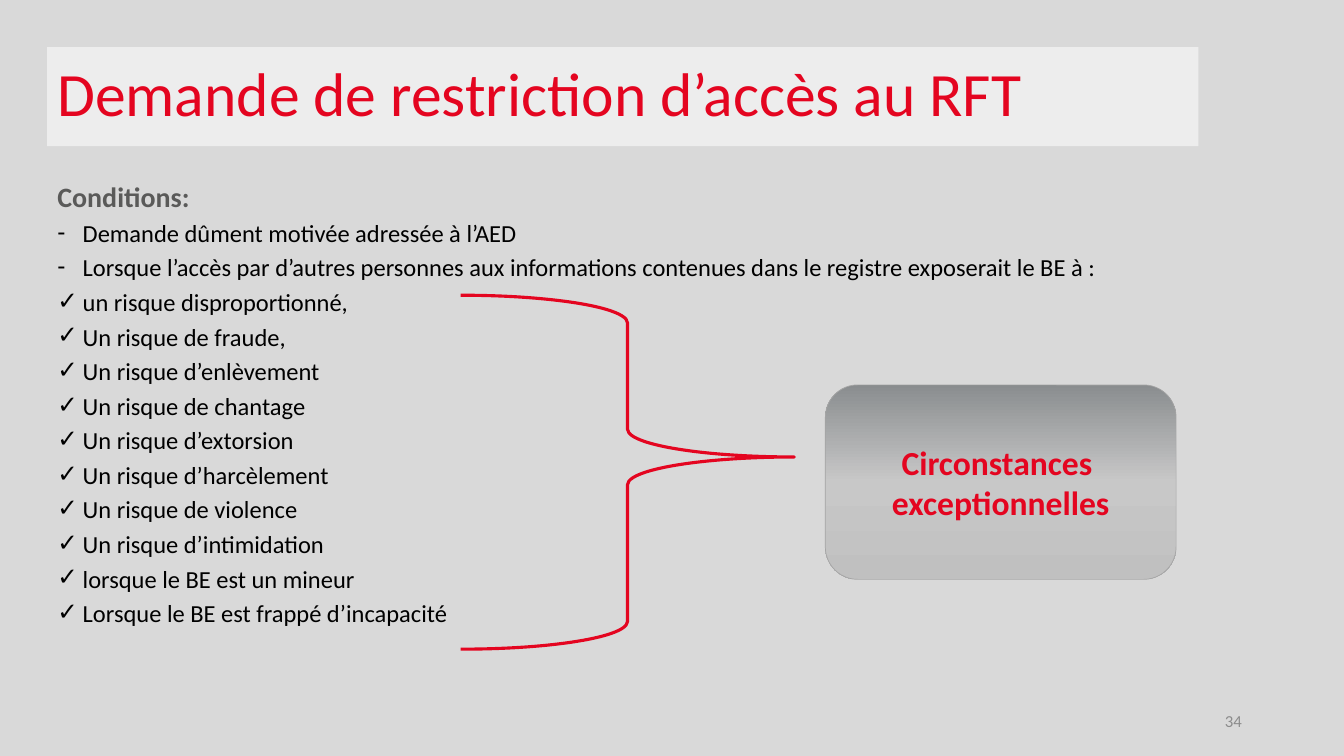
import copy
from dataclasses import dataclass

import pptx
import pptx.dml.color
import pptx.enum.dml
import pptx.enum.shapes
import pptx.enum.text
import pptx.oxml
import pptx.oxml.ns
import pptx.util
from pptx.util import Cm, Pt

RGBColor = pptx.dml.color.RGBColor
MSO_SHAPE = pptx.enum.shapes.MSO_SHAPE
PP_ALIGN = pptx.enum.text.PP_ALIGN
MSO_ANCHOR = pptx.enum.text.MSO_ANCHOR

RED = RGBColor(0xE4, 0x05, 0x20)
BLACK = RGBColor(0, 0, 0)
HEADING_GREY = RGBColor(0x5A, 0x5A, 0x59)
NUMBER_GREY = RGBColor(0x8C, 0x8C, 0x8C)
BACKGROUND = RGBColor(0xD9, 0xD9, 0xD9)
TITLE_FILL = RGBColor(0xED, 0xED, 0xED)
BOX_LINE = RGBColor(0xA5, 0xA5, 0xA5)
BOX_GRADIENT = (
    (0.0, RGBColor(0x8A, 0x8D, 0x8F)),
    (0.5, RGBColor(0xC8, 0xC8, 0xC8)),
    (1.0, RGBColor(0xC0, 0xC0, 0xC0)),
)
FONT = "Calibri"
INDENT = Cm(0.64)


@dataclass(frozen=True)
class Frame:
    left: float
    top: float
    width: float
    height: float

    def lengths(self) -> tuple:
        return Cm(self.left), Cm(self.top), Cm(self.width), Cm(self.height)


@dataclass(frozen=True)
class TextStyle:
    size: float
    color: RGBColor
    bold: bool = False


@dataclass(frozen=True)
class Line:
    text: str
    bullet: str = ""


TITLE_FRAME = Frame(1.19, 1.19, 29.01, 2.49)
BODY_FRAME = Frame(1.19, 4.62, 29.01, 12.6)
BRACE_FRAME = Frame(11.61, 7.44, 8.41, 8.92)
BOX_FRAME = Frame(20.8, 9.7, 8.84, 4.9)
NUMBER_FRAME = Frame(23.93, 17.65, 7.62, 1.02)

TITLE_STYLE = TextStyle(44, RED)
HEADING_STYLE = TextStyle(20, HEADING_GREY, True)
ITEM_STYLE = TextStyle(17.5, BLACK)
BOX_STYLE = TextStyle(24, RED, True)
NUMBER_STYLE = TextStyle(12, NUMBER_GREY)

CONDITIONS = (
    Line("Conditions:"),
    Line("Demande dûment motivée adressée à l’AED", "-"),
    Line("Lorsque l’accès par d’autres personnes aux informations contenues "
         "dans le registre exposerait le BE à :", "-"),
    Line("un risque disproportionné,", "✓"),
    Line("Un risque de fraude,", "✓"),
    Line("Un risque d’enlèvement", "✓"),
    Line("Un risque de chantage", "✓"),
    Line("Un risque d’extorsion", "✓"),
    Line("Un risque d’harcèlement", "✓"),
    Line("Un risque de violence", "✓"),
    Line("Un risque d’intimidation", "✓"),
    Line("lorsque le BE est un mineur", "✓"),
    Line("Lorsque le BE est frappé d’incapacité", "✓"),
)


def place(shape, frame: Frame) -> None:
    shape.left, shape.top, shape.width, shape.height = frame.lengths()


def prepare_text(shape, anchor):
    text_frame = shape.text_frame
    text_frame.word_wrap = True
    text_frame.auto_size = pptx.enum.text.MSO_AUTO_SIZE.NONE
    text_frame.vertical_anchor = anchor
    return text_frame


def add_paragraph(text_frame, index: int, text: str, style: TextStyle, alignment):
    paragraph = text_frame.add_paragraph() if index else text_frame.paragraphs[0]
    paragraph.alignment = alignment
    run = paragraph.add_run()
    run.text = text
    run.font.name = FONT
    run.font.size = Pt(style.size)
    run.font.bold = style.bold
    run.font.color.rgb = style.color
    return paragraph


def set_bullet(paragraph, bullet: str) -> None:
    properties = paragraph._p.get_or_add_pPr()
    properties.set("marL", str(INDENT if bullet else 0))
    properties.set("indent", str(-INDENT if bullet else 0))
    element = pptx.oxml.parse_xml(
        f'<a:{"buChar" if bullet else "buNone"} {pptx.oxml.ns.nsdecls("a")}/>'
    )
    if bullet:
        element.set("char", bullet)
    properties.append(element)


def fill_title(slide) -> None:
    title = slide.shapes.title
    place(title, TITLE_FRAME)
    title.fill.solid()
    title.fill.fore_color.rgb = TITLE_FILL
    text_frame = prepare_text(title, MSO_ANCHOR.MIDDLE)
    paragraph = add_paragraph(text_frame, 0, "Demande de restriction d’accès au RFT",
                              TITLE_STYLE, PP_ALIGN.LEFT)
    paragraph.line_spacing = 0.9


def fill_conditions(slide) -> None:
    body = slide.placeholders[1]
    place(body, BODY_FRAME)
    text_frame = prepare_text(body, MSO_ANCHOR.TOP)
    for index, line in enumerate(CONDITIONS):
        style = ITEM_STYLE if line.bullet else HEADING_STYLE
        paragraph = add_paragraph(text_frame, index, line.text, style, PP_ALIGN.LEFT)
        paragraph.line_spacing = 0.7
        paragraph.space_before = Pt(10)
        paragraph.space_after = Pt(0)
        set_bullet(paragraph, line.bullet)


def add_outlined_shape(slide, kind, frame: Frame, color: RGBColor, width: float):
    shape = slide.shapes.add_shape(kind, *frame.lengths())
    shape.shadow.inherit = False
    shape.line.color.rgb = color
    shape.line.width = Pt(width)
    return shape


def add_brace(slide) -> None:
    brace = add_outlined_shape(slide, MSO_SHAPE.RIGHT_BRACE, BRACE_FRAME, RED, 2.25)
    brace.fill.background()
    brace.adjustments[0] = 0.083
    brace.adjustments[1] = 0.457


def add_circumstances(slide) -> None:
    box = add_outlined_shape(slide, MSO_SHAPE.ROUNDED_RECTANGLE, BOX_FRAME, BOX_LINE, 0.5)
    box.fill.gradient()
    box.fill.gradient_angle = 270
    stop_list = box._element.spPr.find(".//" + pptx.oxml.ns.qn("a:gsLst"))
    stop_list.append(copy.deepcopy(stop_list[-1]))
    for stop, (position, color) in zip(box.fill.gradient_stops, BOX_GRADIENT):
        stop.position = position
        stop.color.rgb = color
    text_frame = prepare_text(box, MSO_ANCHOR.MIDDLE)
    for index, text in enumerate(("Circonstances ", "exceptionnelles")):
        add_paragraph(text_frame, index, text, BOX_STYLE, PP_ALIGN.CENTER)


def add_slide_number(slide) -> None:
    text_box = slide.shapes.add_textbox(*NUMBER_FRAME.lengths())
    text_frame = prepare_text(text_box, MSO_ANCHOR.MIDDLE)
    add_paragraph(text_frame, 0, "34", NUMBER_STYLE, PP_ALIGN.RIGHT)


def main() -> None:
    presentation = pptx.Presentation()
    presentation.slide_width = Cm(33.87)
    presentation.slide_height = Cm(19.05)
    slide = presentation.slides.add_slide(presentation.slide_layouts[1])
    slide.background.fill.solid()
    slide.background.fill.fore_color.rgb = BACKGROUND
    fill_title(slide)
    fill_conditions(slide)
    add_brace(slide)
    add_circumstances(slide)
    add_slide_number(slide)
    presentation.save("out.pptx")


if __name__ == "__main__":
    main()
